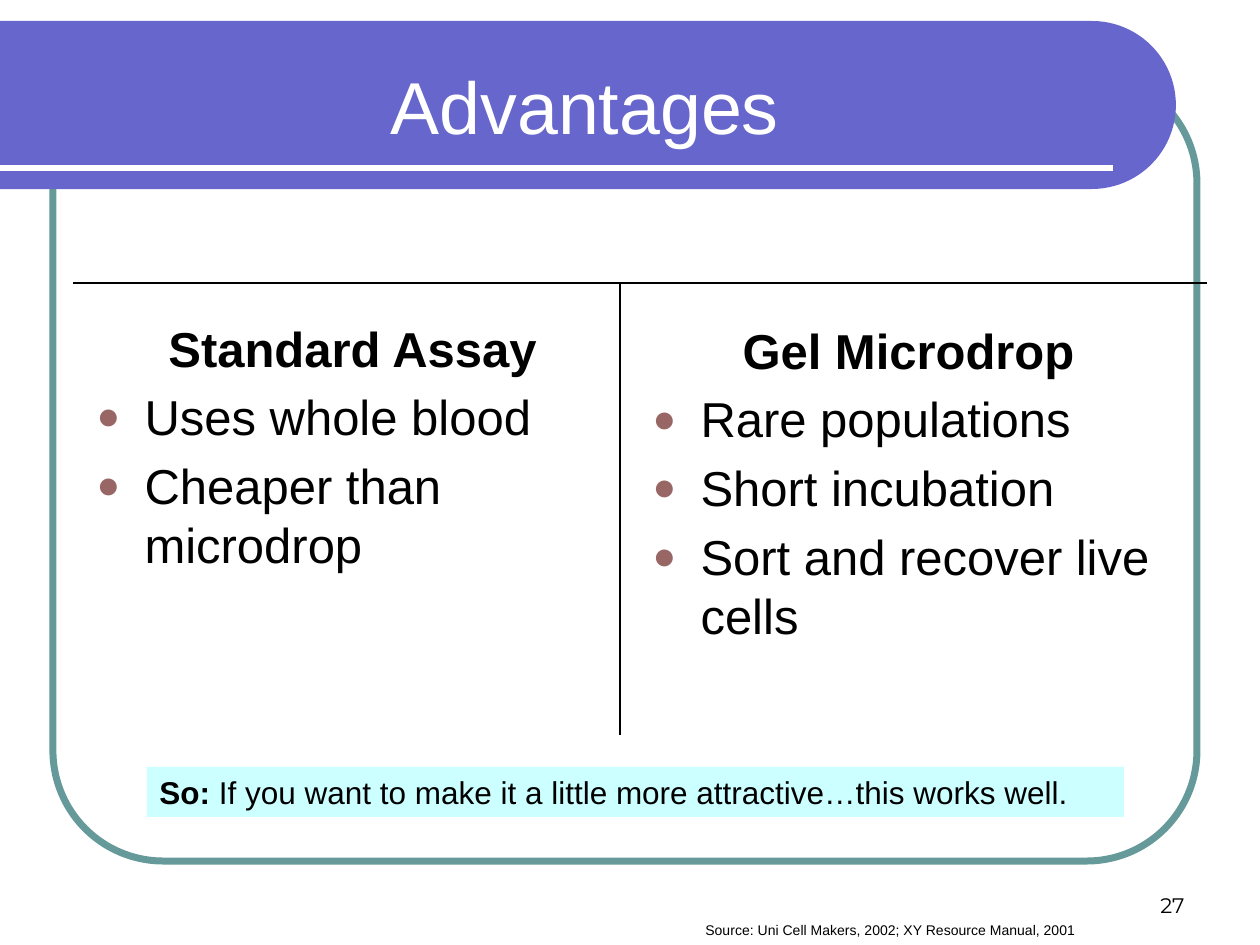
"""Build the Advantages slide: two compared lists in a rounded frame."""
from math import cos, pi, sin

from lxml import etree
from pptx import Presentation
from pptx.dml.color import RGBColor
from pptx.enum.shapes import MSO_CONNECTOR, MSO_SHAPE
from pptx.enum.text import MSO_ANCHOR, MSO_AUTO_SIZE, PP_ALIGN
from pptx.oxml.ns import qn
from pptx.util import Pt

PX = 914400 // 126
LEFT, MID, RIGHT = PP_ALIGN.LEFT, PP_ALIGN.CENTER, PP_ALIGN.RIGHT
TOP, CENTRE, BASE = MSO_ANCHOR.TOP, MSO_ANCHOR.MIDDLE, MSO_ANCHOR.BOTTOM
RECT, ROUND = MSO_SHAPE.RECTANGLE, MSO_SHAPE.ROUNDED_RECTANGLE
STRAIGHT, FIXED = MSO_CONNECTOR.STRAIGHT, MSO_AUTO_SIZE.NONE
BLACK, WHITE = RGBColor(0, 0, 0), RGBColor(255, 255, 255)
BLUE, TEAL = RGBColor(0x66, 0x66, 0xCC), RGBColor(0x66, 0x99, 0x99)
CYAN = RGBColor(0xCC, 0xFF, 0xFF)
BULLET = "996666"

TITLE = "Advantages"
LISTS = [
    ((84, 312, 537, 517), "Standard Assay",
     ["Uses whole blood", "Cheaper than microdrop"]),
    ((640, 314, 537, 496), "Gel Microdrop",
     ["Rare populations", "Short incubation", "Sort and recover live cells"]),
]
NOTE = [("So:", True),
        (" If you want to make it a little more attractive…this works well.", False)]
SOURCE = "Source: Uni Cell Makers, 2002; XY Resource Manual, 2001"
NUMBER = "27"
RULES = [((620, 735), (620, 283)), ((73, 283), (1207, 283))]
INDENT = 48


def scale(box):
    return [n * PX for n in box]


def place(shape, box):
    shape.left, shape.top, shape.width, shape.height = scale(box)


def style(para, size, color=BLACK, align=LEFT, face="Arial", bold=None):
    para.alignment = align
    font = para.font
    font.size, font.name, font.bold = Pt(size), face, bold
    font.color.rgb = color


def setup(frame, anchor=TOP, wrap=True):
    frame.auto_size = FIXED
    frame.word_wrap = wrap
    frame.vertical_anchor = anchor


def rule(shapes, start, end, color, width):
    line = shapes.add_connector(STRAIGHT, *scale(start + end))
    line.line.color.rgb = color
    line.line.width = Pt(width)
    etree.SubElement(line._element.spPr, qn("a:effectLst"))


def label(shapes, box, text, size, wrap=True, **look):
    frame = shapes.add_textbox(*scale(box)).text_frame
    setup(frame, BASE if wrap else TOP, wrap)
    frame.text = text
    style(frame.paragraphs[0], size, **look)


def mark(para, dot):
    props = para._p.get_or_add_pPr()
    props.set("marL", str(INDENT * PX))
    props.set("indent", str(-INDENT * PX))
    if not dot:
        etree.SubElement(props, qn("a:buNone"))
        return
    tint = etree.SubElement(props, qn("a:buClr"))
    etree.SubElement(tint, qn("a:srgbClr"), val=BULLET)
    etree.SubElement(props, qn("a:buSzPct"), val="80000")
    etree.SubElement(props, qn("a:buFont"), typeface="Arial")
    etree.SubElement(props, qn("a:buChar"), char="●")


def fill_list(holder, box, head, items):
    place(holder, box)
    frame = holder.text_frame
    setup(frame)
    frame.text = "\n".join([head] + items)
    for i, para in enumerate(frame.paragraphs):
        mark(para, i > 0)
        para.space_before = Pt(5.6)
        style(para, 28, align=LEFT if i else MID, bold=i == 0)


def add_frame(shapes):
    frame = shapes.add_shape(ROUND, *scale((53, 73, 1144, 788)))
    frame.adjustments[0] = 0.14
    frame.fill.background()
    frame.line.color.rgb = TEAL
    frame.line.width = Pt(4)
    frame.shadow.inherit = False


def add_band(shapes, top=21, end=1092, radius=84, steps=48):
    angles = [pi * i / steps - pi / 2 for i in range(steps + 1)]
    arc = [((end + radius * cos(a)) * PX, (top + radius + radius * sin(a)) * PX)
           for a in angles]
    path = shapes.build_freeform(0, top * PX)
    path.add_line_segments(arc + [(0, (top + 2 * radius) * PX)], close=True)
    band = path.convert_to_shape()
    band.fill.solid()
    band.fill.fore_color.rgb = BLUE
    band.line.fill.background()
    band.shadow.inherit = False
    rule(shapes, (0, 168), (1113, 168), WHITE, 3)


def add_note(shapes):
    note = shapes.add_shape(RECT, *scale((147, 767, 977, 50)))
    note.fill.solid()
    note.fill.fore_color.rgb = CYAN
    note.line.fill.background()
    note.shadow.inherit = False
    setup(note.text_frame)
    para = note.text_frame.paragraphs[0]
    style(para, 18)
    for text, bold in NOTE:
        run = para.add_run()
        run.text, run.font.bold = text, bold


def main():
    deck = Presentation()
    deck.slide_width, deck.slide_height = scale((1260, 945))
    slide = deck.slides.add_slide(deck.slide_layouts[3])
    shapes = slide.shapes
    title, *bodies = list(slide.placeholders)

    add_frame(shapes)
    add_band(shapes)
    label(shapes, (903, 861, 294, 63), NUMBER, 12, align=RIGHT, face="Montserrat")

    for holder in [title] + bodies:
        shapes._spTree.append(holder._element)
    place(title, (378, 53, 557, 105))
    setup(title.text_frame, CENTRE)
    title.text_frame.text = TITLE
    style(title.text_frame.paragraphs[0], 42, WHITE)
    for holder, (box, head, items) in zip(bodies, LISTS):
        fill_list(holder, box, head, items)

    for start, end in RULES:
        rule(shapes, start, end, BLACK, 0.75)
    label(shapes, (693, 915, 403, 29), SOURCE, 8, wrap=False)
    add_note(shapes)
    deck.save("out.pptx")


if __name__ == "__main__":
    main()
